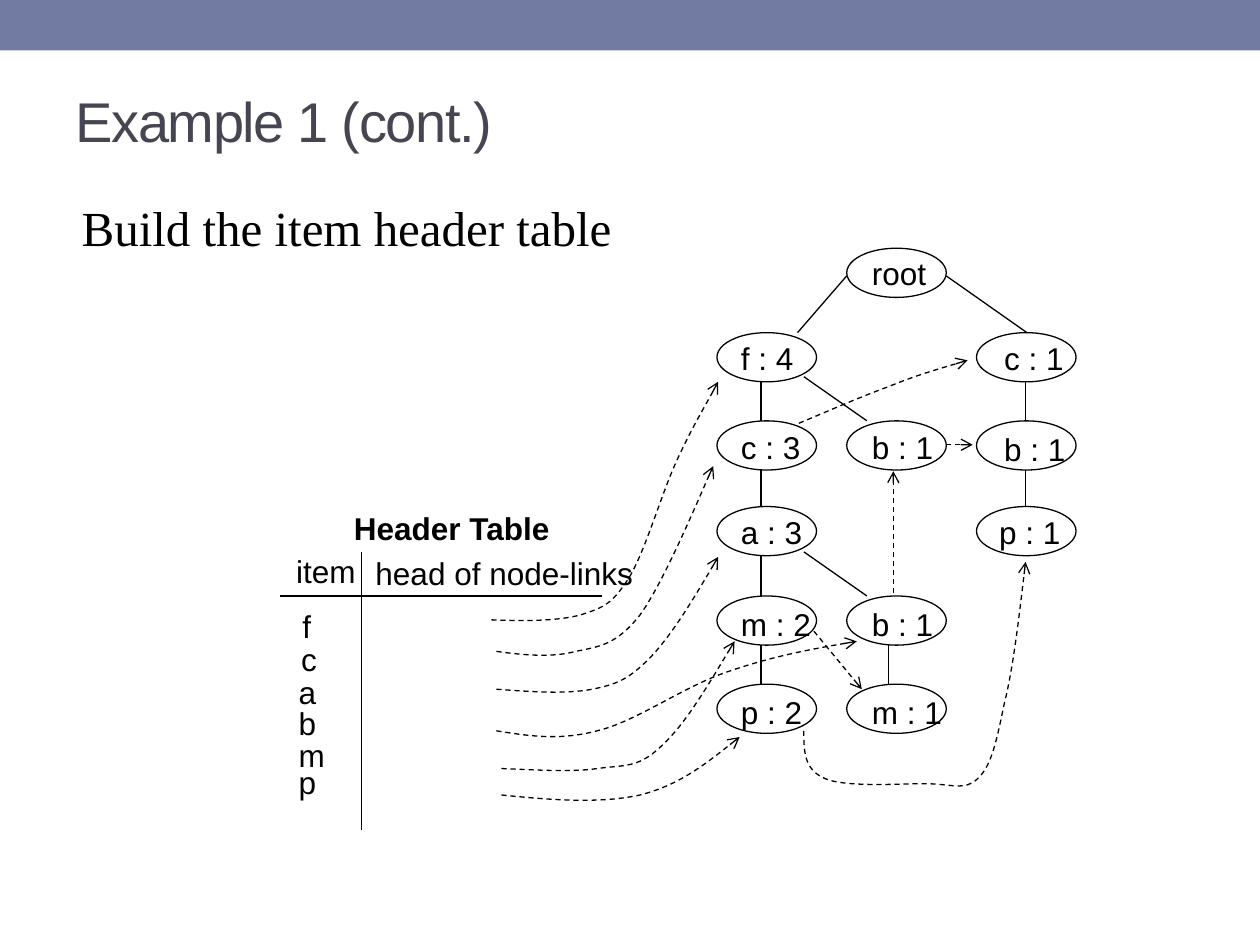
from typing import NamedTuple

from lxml.etree import SubElement
from pptx import Presentation
from pptx.dml.color import RGBColor
from pptx.enum.dml import MSO_LINE as Dash
from pptx.enum.shapes import MSO_CONNECTOR as Link, MSO_SHAPE as Kind
from pptx.enum.text import MSO_ANCHOR as Anchor
from pptx.oxml.ns import qn
from pptx.util import Inches, Pt

COLS, ROWS = 1000, 750
deck = Presentation()
deck.slide_width, deck.slide_height = Inches(10), Inches(7.5)
UNIT = deck.slide_width // COLS
slide = deck.slides.add_slide(deck.slide_layouts[6])
shapes = slide.shapes

BLACK = "000000"
NODE_W, NODE_H = 79, 39
LEFTS = [569, 672, 775]
TOPS = [197, 264, 334, 402, 473, 543]

Point = tuple[int, int]


class Node(NamedTuple):
    col: int
    row: int
    text: str
    dx: int
    dy: int


class Edge(NamedTuple):
    start: Point
    end: Point


class Curve(NamedTuple):
    start: Point
    bends: list[Point]


class Item(NamedTuple):
    text: str
    left: int
    top: int


NODES = [
    Node(1, 0, "root", 20, 5),
    Node(0, 1, "f : 4", 19, 5),
    Node(2, 1, "c : 1", 22, 5),
    Node(0, 2, "c : 3", 19, 6),
    Node(1, 2, "b : 1", 20, 6),
    Node(2, 2, "b : 1", 22, 7),
    Node(0, 3, "a : 3", 19, 5),
    Node(2, 3, "p : 1", 18, 5),
    Node(0, 4, "m : 2", 19, 7),
    Node(1, 4, "b : 1", 20, 7),
    Node(0, 5, "p : 2", 19, 7),
    Node(1, 5, "m : 1", 20, 7),
]

DROPS = [(604, 1), (604, 2), (604, 3), (604, 4), (705, 4), (814, 1), (814, 2)]

EDGES = [
    Edge((222, 473), (478, 473)),
    Edge((287, 438), (287, 659)),
    Edge((751, 219), (815, 264)),
    Edge((672, 219), (633, 264)),
    Edge((638, 299), (688, 334)),
    Edge((638, 438), (688, 473)),
] + [Edge((x, TOPS[row] + NODE_H), (x, TOPS[row + 1])) for x, row in DROPS]

JUMPS = [
    Edge((646, 501), (684, 547)),
    Edge((709, 471), (709, 374)),
    Edge((751, 353), (772, 353)),
]

CURVES = [
    Curve((390, 492), [(416, 493), (443, 493), (461, 488), (480, 482), (486, 479), (499, 459),
                       (512, 438), (525, 392), (537, 366), (549, 340), (560, 322), (570, 303)]),
    Curve((394, 517), [(416, 520), (438, 522), (457, 517), (476, 513), (489, 512), (508, 488),
                       (526, 463), (557, 390), (566, 370)]),
    Curve((394, 547), [(422, 549), (449, 551), (470, 547), (490, 543), (499, 539), (516, 522),
                       (533, 504), (552, 473), (570, 442)]),
    Curve((394, 580), [(419, 584), (444, 588), (474, 580), (504, 573), (541, 546), (575, 534),
                       (609, 522), (644, 515), (680, 509)]),
    Curve((398, 610), [(426, 611), (453, 613), (474, 610), (495, 607), (506, 610), (524, 593),
                       (543, 576), (563, 542), (583, 509)]),
    Curve((398, 631), [(437, 635), (476, 638), (508, 631), (539, 623), (563, 604), (587, 585)]),
    Curve((634, 336), [(658, 326), (683, 315), (705, 307), (727, 298), (748, 292), (768, 286)]),
    Curve((638, 580), [(638, 596), (638, 611), (655, 618), (671, 625), (714, 622), (734, 622),
                       (755, 622), (766, 628), (776, 618), (787, 608), (791, 588), (797, 559),
                       (804, 531), (809, 488), (814, 446)]),
]

ITEMS = [
    Item("f", 240, 482),
    Item("c", 239, 508),
    Item("a", 237, 534),
    Item("b", 237, 559),
    Item("m", 237, 584),
    Item("p", 237, 606),
]


def grid(*cells: int) -> list[int]:
    return [cell * UNIT for cell in cells]


def tint(code: str) -> RGBColor:
    return RGBColor.from_string(code)


def write(text: str, left: int, top: int, width: int, height: int = 30, *, size: float = 18,
          face: str = "Arial", color: str = BLACK, bold: bool = False,
          pad: Point = (0, 0), mid: bool = False, track: int = 0) -> None:
    frame = shapes.add_textbox(*grid(left, top, width, height)).text_frame
    frame.word_wrap = True
    frame.margin_left = frame.margin_right = pad[0] * UNIT
    frame.margin_top = frame.margin_bottom = pad[1] * UNIT
    frame.vertical_anchor = Anchor.MIDDLE if mid else Anchor.TOP
    run = frame.paragraphs[0].add_run()
    run.text = text
    font = run.font
    font.size, font.name, font.bold = Pt(size), face, bold
    font.color.rgb = tint(color)
    if track:
        run._r.get_or_add_rPr().set("spc", str(track))


def stroke(shape, arrow: bool = False) -> None:
    line = shape.line
    line.color.rgb = tint(BLACK)
    line.width = Pt(0.75)
    if arrow:
        line.dash_style = Dash.DASH
        SubElement(line._get_or_add_ln(), qn("a:tailEnd"), type="arrow")


def join(edge: Edge, arrow: bool = False) -> None:
    link = shapes.add_connector(Link.STRAIGHT, *grid(*edge.start, *edge.end))
    stroke(link, arrow)
    SubElement(link._element.spPr, qn("a:effectLst"))


def bend(curve: Curve) -> None:
    maker = shapes.build_freeform(*curve.start, scale=UNIT)
    maker.add_line_segments(curve.bends, close=False)
    shape = maker.convert_to_shape()
    shape.fill.background()
    shape.shadow.inherit = False
    stroke(shape, arrow=True)
    steps = list(shape._element.iter(qn("a:lnTo")))
    track = steps[0].getparent()
    for first in range(0, len(steps), 3):
        cubic = SubElement(track, qn("a:cubicBezTo"))
        for step in steps[first:first + 3]:
            cubic.append(step[0])
            track.remove(step)


def plot(node: Node) -> None:
    left, top = LEFTS[node.col], TOPS[node.row]
    oval = shapes.add_shape(Kind.OVAL, *grid(left, top, NODE_W, NODE_H))
    oval.fill.background()
    oval.shadow.inherit = False
    stroke(oval)
    write(node.text, left + node.dx, top + node.dy, 62)


def main() -> None:
    band = shapes.add_shape(Kind.RECTANGLE, *grid(0, 0, COLS, 40))
    band.fill.solid()
    band.fill.fore_color.rgb = tint("727CA3")
    band.line.fill.background()
    band.shadow.inherit = False
    write("Example 1 (cont.)", 50, 41, 900, 108, size=32, color="464653",
          pad=(10, 5), mid=True, track=-80)
    write("Build the item header table", 55, 152, 638, 57, size=28,
          face="Times New Roman", pad=(10, 5))
    write("Header Table", 281, 404, 163, bold=True)
    write("item", 235, 438, 55)
    write("head of node-links", 298, 440, 211)
    for item in ITEMS:
        write(item.text, item.left, item.top, 23)
    for edge in EDGES:
        join(edge)
    for node in NODES:
        plot(node)
    for curve in CURVES:
        bend(curve)
    for jump in JUMPS:
        join(jump, arrow=True)
    deck.save("out.pptx")


if __name__ == "__main__":
    main()
